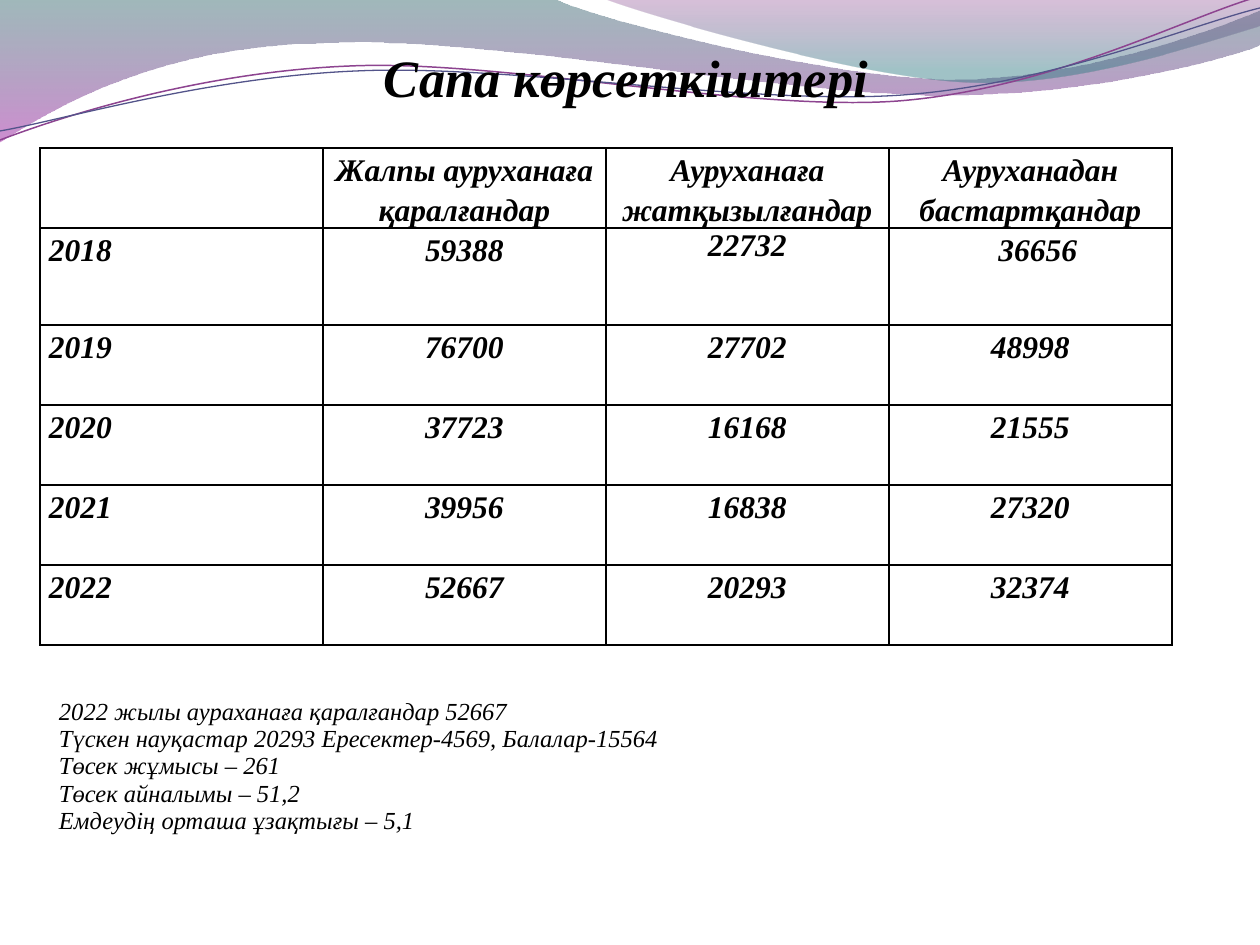
from lxml import etree
from pptx import Presentation
from pptx.dml.color import RGBColor
from pptx.enum.text import PP_ALIGN
from pptx.oxml.ns import qn
from pptx.util import Pt

CENTER, LEFT = PP_ALIGN.CENTER, PP_ALIGN.LEFT
SCALE = 914400 / 126
BLACK, WHITE = "000000", "FFFFFF"

UPPER_WAVE = [(0, 0), (554, -1), (600, 21, 837, 79, 955, 79),
              (1075, 79, 1207, 33, 1260, 11), (1261, 45),
              (1239, 55, 1096, 96, 940, 95), (781, 95, 481, 35, 324, 43),
              (163, 45, 58, 105, -1, 142)]
RIGHT_WAVE = [(604, -1), (641, 14, 859, 78, 969, 82),
              (1079, 87, 1211, 40, 1260, 26), (1260, 0)]
PURPLE_CURVE = [(0, 140), (60, 117, 199, 72, 349, 66),
                (498, 59, 747, 112, 898, 101), (1050, 89, 1182, 19, 1257, -3)]
BLUE_CURVE = [(0, 131), (59, 121, 207, 77, 357, 71),
              (508, 64, 752, 106, 903, 95), (1053, 84, 1187, 26, 1260, 8)]

HEADERS = ["", "Жалпы ауруханаға қаралғандар", "Ауруханаға жатқызылғандар",
           "Ауруханадан бастартқандар"]
YEARS = [["2018", "59388", "22732", "36656"],
         ["2019", "76700", "27702", "48998"],
         ["2020", "37723", "16168", "21555"],
         ["2021", "39956", "16838", "27320"],
         ["2022", "52667", "20293", "32374"]]
NOTES = ["2022 жылы аураханаға қаралғандар 52667",
         "Түскен науқастар 20293 Ересектер-4569, Балалар-15564",
         "Төсек жұмысы – 261",
         "Төсек айналымы – 51,2",
         "Емдеудің орташа ұзақтығы – 5,1"]


def px(length):
    """Turn pixels into EMU."""
    return round(length * SCALE)


def color(value):
    """Turn a hex string into a colour."""
    return RGBColor.from_string(value)


def apply(target, values):
    """Set each attribute of a target from a dict."""
    for name, value in values.items():
        setattr(target, name, value)


def write(para, text, size, bold=True, align=LEFT, spacing=1.0):
    """Write one formatted span into a paragraph."""
    apply(para, {"alignment": align, "line_spacing": spacing})
    span = para.add_run()
    span.text = text
    apply(span.font, {"name": "Times New Roman", "size": Pt(size),
                      "bold": bold, "italic": True})
    span.font.color.rgb = color(BLACK)


def bend(shape, outline):
    """Merge the three segments of each six-number step into a cubic curve."""
    segments = iter(list(shape._element.spPr.iter(qn("a:lnTo"))))
    for step in outline[1:]:
        first = next(segments)
        if len(step) == 6:
            first.tag_name = None
            curve = etree.Element(qn("a:cubicBezTo"))
            first.addprevious(curve)
            for segment in (first, next(segments), next(segments)):
                curve.append(segment[0])
                segment.getparent().remove(segment)


def draw_outline(page, box, outline, close):
    """Draw an outline relative to the corner of a box."""
    left, top = box[:2]
    points = [(px(left + step[index]), px(top + step[index + 1]))
              for step in outline for index in range(0, len(step), 2)]
    builder = page.shapes.build_freeform(*points[0], scale=1.0)
    builder.add_line_segments(points[1:], close=close)
    shape = builder.convert_to_shape()
    bend(shape, outline)
    shape.shadow.inherit = False
    return shape


def add_wave(page, box, outline, stops):
    """Add a wave with a translucent downward gradient."""
    shape = draw_outline(page, box, outline, True)
    shape.line.fill.background()
    shape.fill.gradient()
    shape.fill.gradient_angle = 270
    for stop, (position, tone, opacity) in zip(shape.fill.gradient_stops, stops):
        stop.position = position
        stop.color.rgb = color(tone)
    for tint, (_, _, opacity) in zip(shape._element.spPr.iter(qn("a:srgbClr")), stops):
        etree.SubElement(tint, qn("a:alpha"), val=str(opacity * 1000))


def add_curve(page, box, outline, tone, width):
    """Add an open curved line."""
    shape = draw_outline(page, box, outline, False)
    shape.fill.background()
    shape.line.color.rgb = color(tone)
    shape.line.width = Pt(width)


def add_header_art(page, box):
    """Place the waves and curves along the top."""
    add_wave(page, box, UPPER_WAVE, [(0, "2D6368", 45), (1, "A530A9", 55)])
    add_wave(page, box, RIGHT_WAVE, [(0, "7F2F82", 30), (0.8, "2F7B82", 45)])
    add_curve(page, box, PURPLE_CURVE, "8D4490", 0.85)
    add_curve(page, box, BLUE_CURVE, "53548A", 0.75)


def add_title(page, box):
    """Place the slide title."""
    frame = page.shapes.add_textbox(*map(px, box)).text_frame
    apply(frame, {"word_wrap": True, "margin_top": px(6), "margin_bottom": 0})
    write(frame.paragraphs[0], "Сапа көрсеткіштері", 30, align=CENTER)


def add_grid(page, box, rows, columns):
    """Add a plain table without a banded style."""
    table = page.shapes.add_table(rows, columns, *map(px, box)).table
    apply(table, {"first_row": False, "horz_banding": False})
    return table


def format_cell(cell, tone, bottom=1):
    """Give a cell its insets, borders and empty fill."""
    apply(cell, {"margin_left": px(9), "margin_right": px(9),
                 "margin_top": 0, "margin_bottom": 0})
    properties = cell._tc.get_or_add_tcPr()
    for side, width in (("L", 1), ("R", 1), ("T", 1), ("B", bottom)):
        border = etree.SubElement(properties, qn(f"a:ln{side}"), w=str(Pt(width)))
        fill = etree.SubElement(border, qn("a:solidFill"))
        etree.SubElement(fill, qn("a:srgbClr"), val=tone)
    cell.fill.background()


def add_quality_table(page, box):
    """Place the yearly figures."""
    rows = [HEADERS] + YEARS
    table = add_grid(page, box, len(rows), len(HEADERS))
    for index, values in enumerate(rows):
        table.rows[index].height = px(97 if index == 1 else 80)
        for column, text in enumerate(values):
            cell = table.cell(index, column)
            format_cell(cell, BLACK)
            if text:
                write(cell.text_frame.paragraphs[0], text, 18,
                      align=CENTER if column else LEFT,
                      spacing=1.0 if (index, column) == (1, 2) else 1.15)
    table.cell(1, 3).margin_left = px(24)


def add_notes_table(page, box):
    """Place the summary lines in a white-bordered cell."""
    cell = add_grid(page, box, 1, 1).cell(0, 0)
    format_cell(cell, WHITE, bottom=3)
    frame = cell.text_frame
    for index, text in enumerate(NOTES):
        para = frame.add_paragraph() if index else frame.paragraphs[0]
        write(para, text, 14, bold=False)


def main():
    """Build the slide and save the deck."""
    deck = Presentation()
    apply(deck, {"slide_width": px(1260), "slide_height": px(945)})
    page = deck.slides.add_slide(deck.slide_layouts[6])
    add_header_art(page, (0, 0, 1260, 142))
    add_quality_table(page, (40, 148, 1132, 497))
    add_title(page, (227, 39, 798, 60))
    add_notes_table(page, (50, 699, 1144, 217))
    deck.save("out.pptx")


if __name__ == "__main__":
    main()
